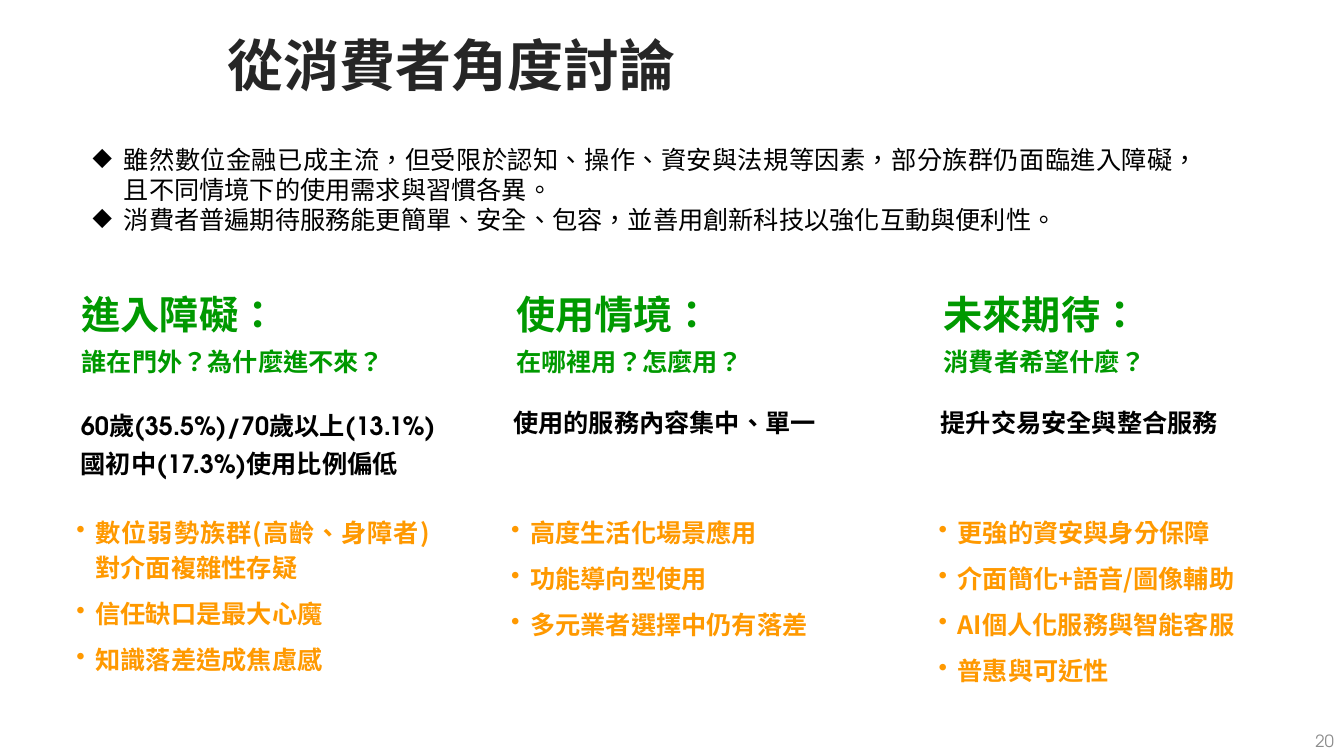
from pptx import Presentation
from pptx.dml.color import RGBColor
from pptx.enum.shapes import MSO_SHAPE
from pptx.enum.text import MSO_ANCHOR, MSO_AUTO_SIZE, PP_ALIGN
from pptx.oxml.xmlchemy import OxmlElement
from pptx.util import Inches, Pt

TITLE = "從消費者角度討論"
PAGE_NUMBER = "20"
SUMMARY = [
    "雖然數位金融已成主流，但受限於認知、操作、資安與法規等因素，部分族群仍面臨進入障礙，且不同情境下的使用需求與習慣各異。",
    "消費者普遍期待服務能更簡單、安全、包容，並善用創新科技以強化互動與便利性。",
]
COLUMNS = [
    {
        "left": 0.66,
        "heading": ["進入障礙：", "誰在門外？為什麼進不來？"],
        "finding": ["60歲(35.5%)/70歲以上(13.1%)", "國初中(17.3%)使用比例偏低"],
        "finding_size": (3.85, 0.88),
        "points": ["數位弱勢族群(高齡、身障者)對介面複雜性存疑", "信任缺口是最大心魔", "知識落差造成焦慮感"],
        "points_size": (3.7, 1.69),
        "align": PP_ALIGN.JUSTIFY,
    },
    {
        "left": 4.97,
        "heading": ["使用情境：", "在哪裡用？怎麼用？"],
        "finding": ["使用的服務內容集中、單一"],
        "finding_size": (3.46, 0.45),
        "points": ["高度生活化場景應用", "功能導向型使用", "多元業者選擇中仍有落差"],
        "points_size": (3.55, 1.69),
        "align": PP_ALIGN.LEFT,
    },
    {
        "left": 9.21,
        "heading": ["未來期待：", "消費者希望什麼？"],
        "finding": ["提升交易安全與整合服務"],
        "finding_size": (3.28, 0.45),
        "points": ["更強的資安與身分保障", "介面簡化+語音/圖像輔助", "AI個人化服務與智能客服", "普惠與可近性"],
        "points_size": (3.55, 1.8),
        "align": PP_ALIGN.LEFT,
    },
]
COLORS = {
    "title": "262626",
    "body": "000000",
    "heading": "009900",
    "point": "FF9900",
    "number": "8C8C8C",
}
CJK = "Noto Sans CJK SC"
LATIN = "TeX Gyre Adventor"
HEADING_TOP, FINDING_TOP, POINTS_TOP = 2.78, 3.97, 5.04


def add_bullet(para, mark, indent):
    props = para._p.get_or_add_pPr()
    props.set("marL", str(Inches(indent)))
    props.set("indent", str(-Inches(indent)))
    bullet = OxmlElement("a:buChar")
    bullet.set("char", mark)
    props.append(bullet)


def write(box, lines, sizes, font, color, bold=False, align=PP_ALIGN.LEFT,
          anchor=MSO_ANCHOR.TOP, grow=True, before=0, after=0, spacing=1.0,
          mark=None, indent=0):
    frame = box.text_frame
    frame.word_wrap = True
    frame.vertical_anchor = anchor
    frame.auto_size = MSO_AUTO_SIZE.SHAPE_TO_FIT_TEXT if grow else MSO_AUTO_SIZE.NONE
    frame.text = "\n".join(lines)
    for index, para in enumerate(frame.paragraphs):
        para.alignment = align
        para.space_before, para.space_after = Pt(before), Pt(after)
        para.line_spacing = spacing
        if mark:
            add_bullet(para, mark, indent)
        for span in para.runs:
            span.font.size = Pt(sizes[min(index, len(sizes) - 1)])
            span.font.name = font
            span.font.bold = bold
            span.font.color.rgb = RGBColor.from_string(COLORS[color])
            props = span._r.get_or_add_rPr()
            props.set("lang", "zh-TW")
            east_asian = OxmlElement("a:ea")
            east_asian.set("typeface", CJK)
            props.append(east_asian)


def add_text(shapes, place, *args, **style):
    write(shapes.add_textbox(*map(Inches, place)), *args, **style)


def add_panel(shapes, place, lines, sizes, color):
    panel = shapes.add_shape(MSO_SHAPE.ROUNDED_RECTANGLE, *map(Inches, place))
    panel.shadow.inherit = False
    panel.fill.background()
    panel.line.fill.background()
    write(panel, lines, sizes, LATIN, color, bold=True,
          anchor=MSO_ANCHOR.MIDDLE, before=6)


def add_column(page, column):
    shapes = page.shapes.add_group_shape().shapes
    left = column["left"]
    add_panel(shapes, (left, HEADING_TOP, 3.28, 1.06), column["heading"], (28, 18), "heading")
    add_panel(shapes, (left, FINDING_TOP, *column["finding_size"]), column["finding"], (18,), "body")
    add_text(shapes, (left, POINTS_TOP, *column["points_size"]), column["points"], (18,), CJK,
             "point", bold=True, align=column["align"], after=8, spacing=1.15,
             mark="•", indent=0.19)


def main():
    """Build the consumer perspective slide."""
    deck = Presentation()
    deck.slide_width, deck.slide_height = Inches(13.33), Inches(7.5)
    page = deck.slides.add_slide(deck.slide_layouts[6])
    add_text(page.shapes, (10.22, 7.19, 3.11, 0.31), [PAGE_NUMBER], (12,), LATIN, "number",
             align=PP_ALIGN.RIGHT, anchor=MSO_ANCHOR.MIDDLE, grow=False)
    add_text(page.shapes, (0.82, 1.38, 11.17, 1.01), SUMMARY, (18,), CJK, "body",
             align=PP_ALIGN.JUSTIFY, mark="◆", indent=0.31)
    for column in COLUMNS:
        add_column(page, column)
    add_text(page.shapes, (2.16, 0.21, 11.18, 0.94), [TITLE], (40,), CJK, "title", bold=True,
             anchor=MSO_ANCHOR.MIDDLE, grow=False, spacing=0.9)
    deck.save("out.pptx")


if __name__ == "__main__":
    main()
